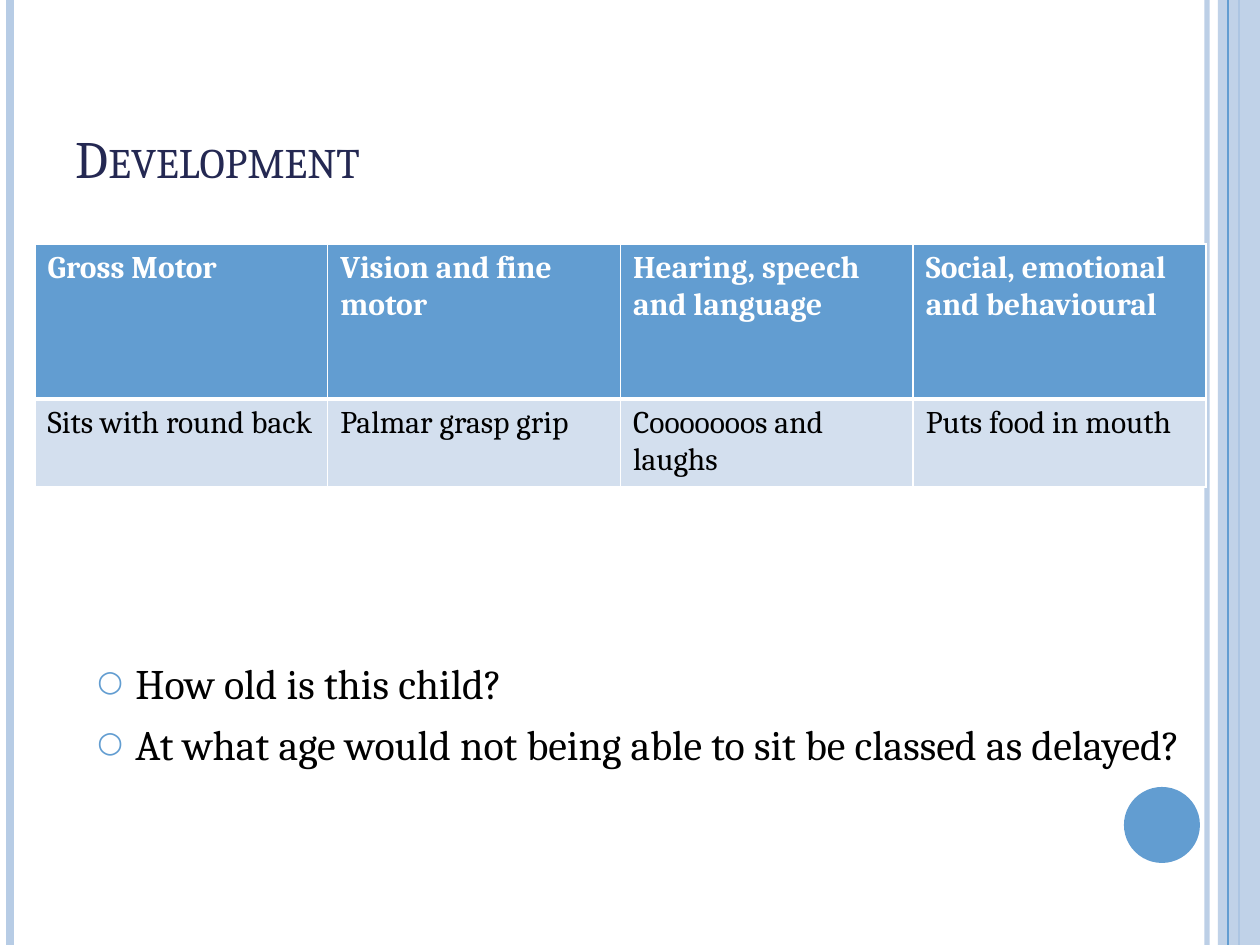
import pptx
import pptx.util
import pptx.dml.color
import pptx.enum.shapes
import pptx.enum.text
import pptx.oxml.ns
from lxml import etree

COLORS = {
    "pale": "B7CCE5",
    "blue": "629DD1",
    "navy": "242852",
    "row": "D3DFEE",
    "white": "FFFFFF",
    "black": "000000",
}
EMU_PER_PX = 914400 / 126
qn = pptx.oxml.ns.qn


def px(n):
    return pptx.util.Emu(round(n * EMU_PER_PX))


def rgb(name):
    return pptx.dml.color.RGBColor.from_string(COLORS[name])


def sub(parent, tag, **attrs):
    return etree.SubElement(parent, qn(tag), {k: str(v) for k, v in attrs.items()})


class Deck:
    font = "Cambria"

    def __init__(self, width, height):
        self.prs = pptx.Presentation()
        self.prs.slide_width = px(width)
        self.prs.slide_height = px(height)
        self.s = self.prs.slides.add_slide(self.prs.slide_layouts[5])

    def run(self, p, text, size, color, bold=False):
        r = p.add_run()
        r.text = text
        r.font.name = self.font
        r.font.size = pptx.util.Pt(size)
        r.font.bold = bold
        r.font.color.rgb = rgb(color)
        return r

    def alpha(self, sp, percent):
        for clr in sp._element.spPr.iter(qn("a:srgbClr")):
            sub(clr, "a:alpha", val=percent * 1000)

    def vline(self, x, color, width, opacity=100):
        c = self.s.shapes.add_connector(
            pptx.enum.shapes.MSO_CONNECTOR.STRAIGHT,
            px(x), 0, px(x), self.prs.slide_height)
        c.line.color.rgb = rgb(color)
        c.line.width = pptx.util.Pt(width)
        if opacity < 100:
            self.alpha(c, opacity)
        sub(c._element.spPr, "a:effectLst")

    def shape(self, kind, x, y, w, h, color, opacity=100):
        sp = self.s.shapes.add_shape(kind, px(x), px(y), px(w), px(h))
        sp.shadow.inherit = False
        sp.fill.solid()
        sp.fill.fore_color.rgb = rgb(color)
        sp.line.fill.background()
        if opacity < 100:
            self.alpha(sp, opacity)

    def title(self, text, x, y, w, h):
        sp = self.s.shapes.title
        sp.left, sp.top, sp.width, sp.height = px(x), px(y), px(w), px(h)
        tf = sp.text_frame
        tf.auto_size = pptx.enum.text.MSO_AUTO_SIZE.NONE
        tf.vertical_anchor = pptx.enum.text.MSO_ANCHOR.BOTTOM
        p = tf.paragraphs[0]
        p.alignment = pptx.enum.text.PP_ALIGN.LEFT
        r = self.run(p, text, 30, "navy")
        r._r.get_or_add_rPr().set("cap", "small")

    def bullets(self, items, x, y, w, h, indent):
        tf = self.s.shapes.add_textbox(px(x), px(y), px(w), px(h)).text_frame
        tf.word_wrap = True
        for i, text in enumerate(items):
            p = tf.add_paragraph() if i else tf.paragraphs[0]
            p.space_before = pptx.util.Pt(6)
            pPr = p._p.get_or_add_pPr()
            pPr.set("marL", str(px(indent)))
            pPr.set("indent", str(-px(indent)))
            sub(sub(pPr, "a:buClr"), "a:srgbClr", val=COLORS["blue"])
            sub(pPr, "a:buSzPct", val=70000)
            sub(pPr, "a:buFont", typeface=self.font)
            sub(pPr, "a:buChar", char="○")
            self.run(p, text, 24, "black")

    def border(self, cell, side, width):
        ln = sub(cell._tc.get_or_add_tcPr(), "a:ln" + side, w=pptx.util.Pt(width))
        sub(sub(ln, "a:solidFill"), "a:srgbClr", val=COLORS["white"])

    def table(self, rows, x, y, w, heights):
        tbl = self.s.shapes.add_table(
            len(rows), len(rows[0]), px(x), px(y), px(w), px(sum(heights))).table
        for i, texts in enumerate(rows):
            tbl.rows[i].height = px(heights[i])
            header = i == 0
            for j, text in enumerate(texts):
                cell = tbl.cell(i, j)
                for side in "LRTB":
                    thick = side == ("B" if header else "T")
                    self.border(cell, side, 3 if thick else 1)
                cell.fill.solid()
                cell.fill.fore_color.rgb = rgb("blue" if header else "row")
                self.run(cell.text_frame.paragraphs[0], text, 18,
                         "white" if header else "black", header)


def main():
    shapes = pptx.enum.shapes.MSO_SHAPE
    d = Deck(1260, 945)
    d.vline(1207, "pale", 3, 93)
    d.vline(10, "pale", 4.5)
    d.vline(1239, "blue", 1.5)
    d.shape(shapes.RECTANGLE, 1218, 0, 42, 945, "pale", 87)
    d.vline(1228, "blue", 0.75)
    d.shape(shapes.OVAL, 1124, 787, 76, 76, "blue")
    d.title("Development", 63, 38, 1029, 157)
    d.bullets([
        "How old is this child?",
        "At what age would not being able to sit be classed as delayed?",
    ], 85, 651, 1123, 198, 38)
    d.table([
        ["Gross Motor", "Vision and fine motor",
         "Hearing, speech and language", "Social, emotional and behavioural"],
        ["Sits with round back", "Palmar grasp grip",
         "Cooooooos and laughs", "Puts food in mouth"],
    ], 35, 244, 1171, [155, 85])
    d.prs.save("out.pptx")


if __name__ == "__main__":
    main()
